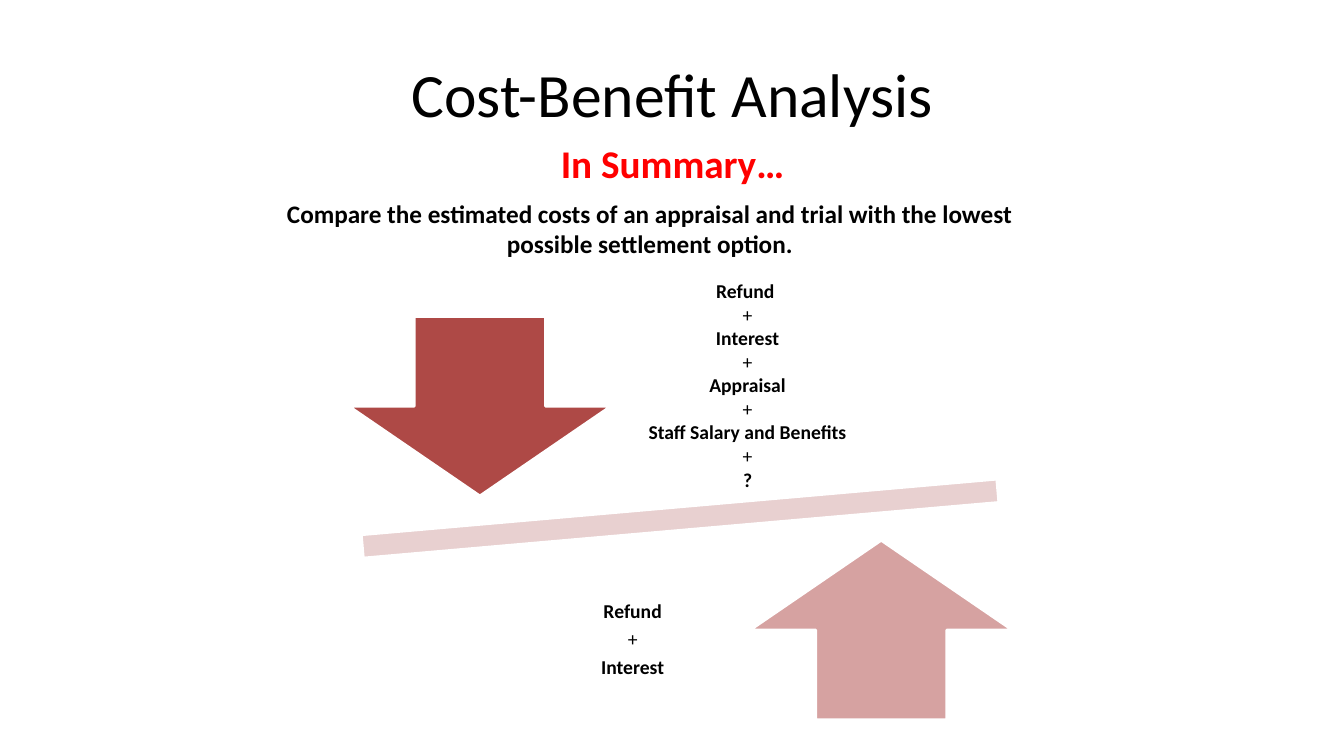
from dataclasses import dataclass
from pptx import Presentation
from pptx.dml.color import RGBColor as RGB
from pptx.enum.shapes import MSO_SHAPE as Shape
from pptx.enum.text import MSO_ANCHOR as Anchor, PP_ALIGN as Align
from pptx.util import Inches, Pt


@dataclass(frozen=True)
class Theme:
    font: str = "Calibri"
    black: str = "000000"
    red: str = "FF0000"
    white: str = "FFFFFF"
    dark: str = "AE4946"
    mid: str = "D6A2A1"
    pale: str = "E8D0D0"
    title: int = 44
    head: int = 28
    body: int = 18
    label: int = 14
    edge: int = 2


class Deck:
    def __init__(self, theme):
        self.theme = theme
        self.file = Presentation()
        self.file.slide_width = Inches(13.33)
        self.file.slide_height = Inches(7.5)
        self.slide = self.file.slides.add_slide(self.file.slide_layouts[5])

    def style(self, para, size, color, bold):
        para.alignment = Align.CENTER
        for run in para.runs:
            font = run.font
            font.name = self.theme.font
            font.size = Pt(size)
            font.bold = bold
            font.color.rgb = RGB.from_string(color)

    def title(self, text, box):
        shape = self.slide.shapes.title
        shape.left, shape.top, shape.width, shape.height = map(Inches, box)
        frame = shape.text_frame
        frame.text = text
        frame.vertical_anchor = Anchor.MIDDLE
        self.style(frame.paragraphs[0], self.theme.title, self.theme.black, False)

    def text(self, lines, box, size, color=None):
        frame = self.slide.shapes.add_textbox(*map(Inches, box)).text_frame
        frame.word_wrap = True
        frame.text = "\n".join(lines)
        for para in frame.paragraphs:
            self.style(para, size, color or self.theme.black, para.text != "+")
        return frame

    def shape(self, kind, box, fill, turn=0):
        shape = self.slide.shapes.add_shape(kind, *map(Inches, box))
        shape.rotation = turn
        shape.shadow.inherit = False
        shape.fill.solid()
        shape.fill.fore_color.rgb = RGB.from_string(fill)
        shape.line.color.rgb = RGB.from_string(self.theme.white)
        shape.line.width = Pt(self.theme.edge)

    def save(self):
        self.file.save("out.pptx")


def main():
    theme = Theme()
    deck = Deck(theme)
    deck.title("Cost-Benefit Analysis", (0.67, 0.3, 12, 1.25))
    deck.text(["In Summary…"], (2.17, 1.33, 9, 0.6), theme.head, theme.red)
    deck.text(
        ["Compare the estimated costs of an appraisal and trial "
         "with the lowest possible settlement option."],
        (2.5, 1.92, 7.89, 0.7), theme.body)

    deck.shape(Shape.MATH_MINUS, (2.44, 4.65, 8.61, 0.99), theme.pale, 355)
    deck.shape(Shape.DOWN_ARROW, (3.46, 3.14, 2.6, 1.78), theme.dark)
    deck.shape(Shape.UP_ARROW, (7.44, 5.36, 2.6, 1.78), theme.mid)

    settle = deck.text(["Refund", "+", "Interest"],
                       (4.89, 5.42, 2.77, 1.87), theme.label)
    settle.vertical_anchor = Anchor.MIDDLE
    for para in settle.paragraphs:
        para.line_spacing = 0.9
        para.space_after = Pt(0.35 * theme.label)

    deck.text(["Refund ", "+", "Interest", "+", "Appraisal", "+",
               "Staff Salary and Benefits", "+", "?"],
              (5.83, 2.72, 3.17, 2.22), theme.label)
    deck.save()


if __name__ == "__main__":
    main()
